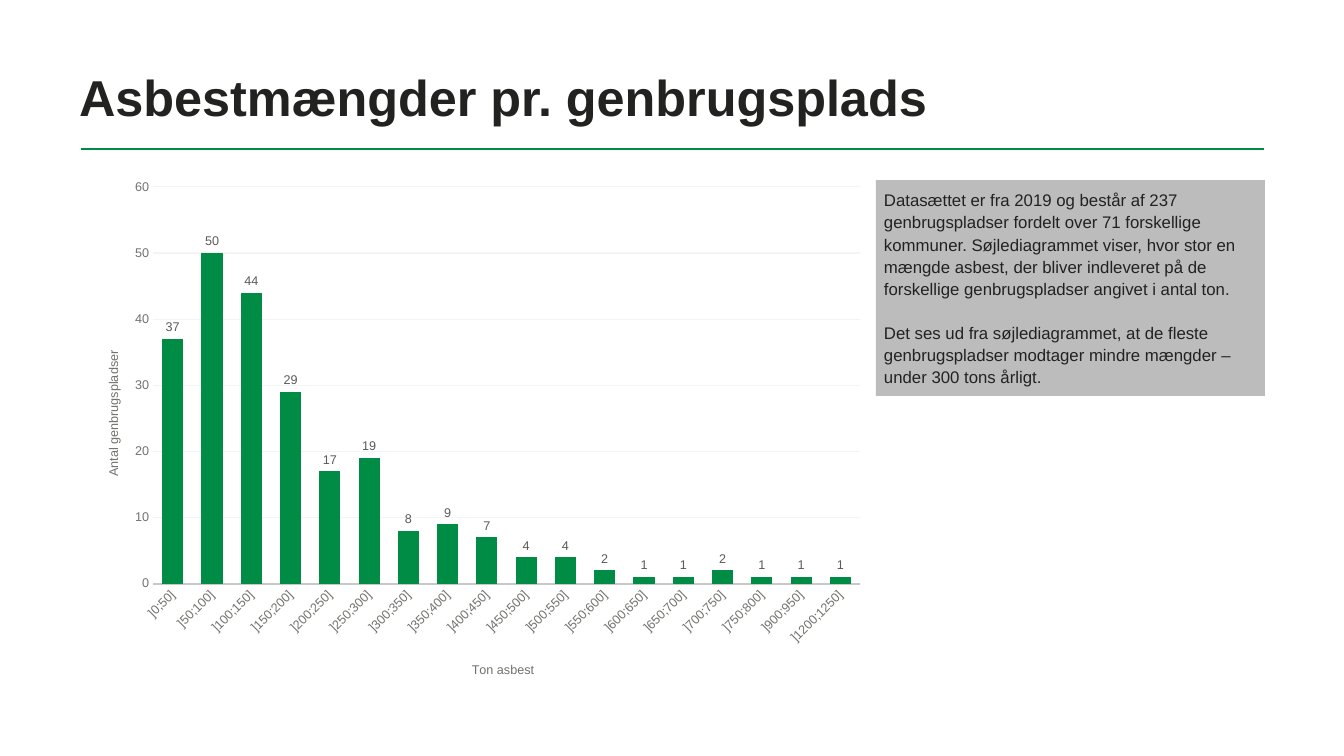
from dataclasses import dataclass

from lxml.etree import SubElement
from pptx import Presentation
from pptx.chart.data import CategoryChartData
from pptx.dml.color import RGBColor
from pptx.enum.chart import XL_CHART_TYPE, XL_LABEL_POSITION, XL_TICK_MARK
from pptx.enum.shapes import MSO_CONNECTOR, MSO_SHAPE
from pptx.enum.text import MSO_ANCHOR, MSO_AUTO_SIZE, PP_ALIGN
from pptx.oxml import parse_xml
from pptx.oxml.ns import nsdecls, qn
from pptx.util import Pt

PX = 914400 / 100.8


def px(*lengths):
    return [round(n * PX) for n in lengths]


@dataclass(frozen=True)
class Theme:
    font: str = "Arial"
    ink: str = "222221"
    green: str = "008C44"
    panel: str = "BCBCBC"
    axis_text: str = "71716D"
    label_text: str = "5A5A58"
    axis_line: str = "C8C8C7"
    grid: str = "F4F4F4"
    title_size: int = 36
    body_size: int = 12
    chart_size: int = 10
    axis_size: int = 9


class SlideBuilder:
    def __init__(self, slide, theme):
        self.slide = slide
        self.theme = theme

    def style(self, font, size, color, bold=False):
        font.name, font.size, font.bold = self.theme.font, Pt(size), bold
        font.color.rgb = RGBColor.from_string(color)

    def stroke(self, line, color, width):
        line.color.rgb = RGBColor.from_string(color)
        line.width = Pt(width)

    def fill_text(self, sp, texts, size, spacing, gap=0, bold=False, inset=0):
        tf = sp.text_frame
        tf.word_wrap = True
        tf.margin_left, tf.margin_top, tf.margin_right, tf.margin_bottom = px(*[inset] * 4)
        for i, text in enumerate(texts):
            p = tf.add_paragraph() if i else tf.paragraphs[0]
            p.text = text
            p.alignment = PP_ALIGN.LEFT
            p.line_spacing = spacing
            if i:
                p.space_before = Pt(gap)
            self.style(p.font, size, self.theme.ink, bold)
        return tf

    def title(self, text, *box):
        sp = self.slide.shapes.add_textbox(*px(*box))
        tf = self.fill_text(sp, [text], self.theme.title_size, 0.88, bold=True)
        tf.vertical_anchor = MSO_ANCHOR.BOTTOM

    def rule(self, x1, x2, y):
        line = self.slide.shapes.add_connector(MSO_CONNECTOR.STRAIGHT, *px(x1, y, x2, y))
        self.stroke(line.line, self.theme.green, 1.5)
        SubElement(line._element.spPr, qn("a:effectLst"))

    def panel(self, texts, *box):
        sp = self.slide.shapes.add_shape(MSO_SHAPE.RECTANGLE, *px(*box))
        sp.shadow.inherit = False
        sp.fill.solid()
        sp.fill.fore_color.rgb = RGBColor.from_string(self.theme.panel)
        sp.line.fill.background()
        tf = self.fill_text(sp, texts, self.theme.body_size, 1.1, gap=15.8, inset=8)
        tf.vertical_anchor = MSO_ANCHOR.TOP
        tf.auto_size = MSO_AUTO_SIZE.SHAPE_TO_FIT_TEXT

    def place(self, parent, **fractions):
        """Fix a chart part at fractions of the chart area."""
        old = parent.find(qn("c:layout"))
        if old is not None:
            parent.remove(old)
        target = '<c:layoutTarget val="inner"/>' if "w" in fractions else ""
        modes = '<c:xMode val="edge"/><c:yMode val="edge"/>'
        values = "".join(f'<c:{key} val="{value}"/>' for key, value in fractions.items())
        layout = parse_xml(
            f'<c:layout {nsdecls("c")}><c:manualLayout>{target}{modes}{values}'
            "</c:manualLayout></c:layout>")
        parent.insert(0 if parent.find(qn("c:tx")) is None else 1, layout)

    def axis(self, axis, title, x, y):
        t = self.theme
        axis.major_tick_mark = axis.minor_tick_mark = XL_TICK_MARK.NONE
        self.style(axis.tick_labels.font, t.axis_size, t.axis_text)
        p = axis.axis_title.text_frame.paragraphs[0]
        p.text = title
        self.style(p.font, t.axis_size, t.axis_text)
        self.place(axis.axis_title._element, x=x, y=y)

    def column_chart(self, counts, x_title, y_title, *box):
        t = self.theme
        data = CategoryChartData()
        data.categories = list(counts)
        data.add_series("Series 1", list(counts.values()))
        chart = self.slide.shapes.add_chart(
            XL_CHART_TYPE.COLUMN_CLUSTERED, *px(*box), data).chart
        chart.has_legend = chart.has_title = False
        self.style(chart.font, t.chart_size, t.ink)

        # Columns and value labels
        plot = chart.plots[0]
        plot.gap_width, plot.overlap, plot.vary_by_categories = 86, 46, False
        fill = plot.series[0].format.fill
        fill.solid()
        fill.fore_color.rgb = RGBColor.from_string(t.green)
        plot.has_data_labels = True
        labels = plot.data_labels
        labels.show_value = True
        labels.position = XL_LABEL_POSITION.OUTSIDE_END
        self.style(labels.font, t.axis_size, t.label_text)

        # Axes
        cat, val = chart.category_axis, chart.value_axis
        self.axis(cat, x_title, 0.49, 0.93)
        self.stroke(cat.format.line, t.axis_line, 1.25)
        cat._element.find(qn("c:txPr")).find(qn("a:bodyPr")).set("rot", "-2700000")
        self.axis(val, y_title, 0.03, 0.34)
        val.minimum_scale, val.maximum_scale, val.major_unit = 0, 60, 10
        val.format.line.fill.background()
        self.stroke(val.major_gridlines.format.line, t.grid, 0.75)
        self.place(chart._chartSpace.chart.plotArea, x=0.093, y=0.034, w=0.887, h=0.753)


# Number of recycling sites by yearly tonnes, in steps of 50
STARTS = [*range(0, 800, 50), 900, 1200]
SITES = [37, 50, 44, 29, 17, 19, 8, 9, 7, 4, 4, 2, 1, 1, 2, 1, 1, 1]
NOTES = [
    "Datasættet er fra 2019 og består af 237 genbrugspladser fordelt over 71 forskellige "
    "kommuner. Søjlediagrammet viser, hvor stor en mængde asbest, der bliver indleveret "
    "på de forskellige genbrugspladser angivet i antal ton.",
    "Det ses ud fra søjlediagrammet, at de fleste genbrugspladser modtager mindre "
    "mængder – under 300 tons årligt.",
]


def main():
    prs = Presentation()
    prs.slide_width, prs.slide_height = px(1344, 756)
    s = SlideBuilder(prs.slides.add_slide(prs.slide_layouts[6]), Theme())

    # Heading
    s.rule(81, 1264, 149)
    s.title("Asbestmængder pr. genbrugsplads", 79, 40, 1171, 87)

    # Chart and explanation
    counts = {f"]{a};{a + 50}]": n for a, n in zip(STARTS, SITES)}
    s.column_chart(counts, "Ton asbest", "Antal genbrugspladser", 79, 169, 797, 527)
    s.panel(NOTES, 876, 180, 389, 216)
    prs.save("out.pptx")


if __name__ == "__main__":
    main()
